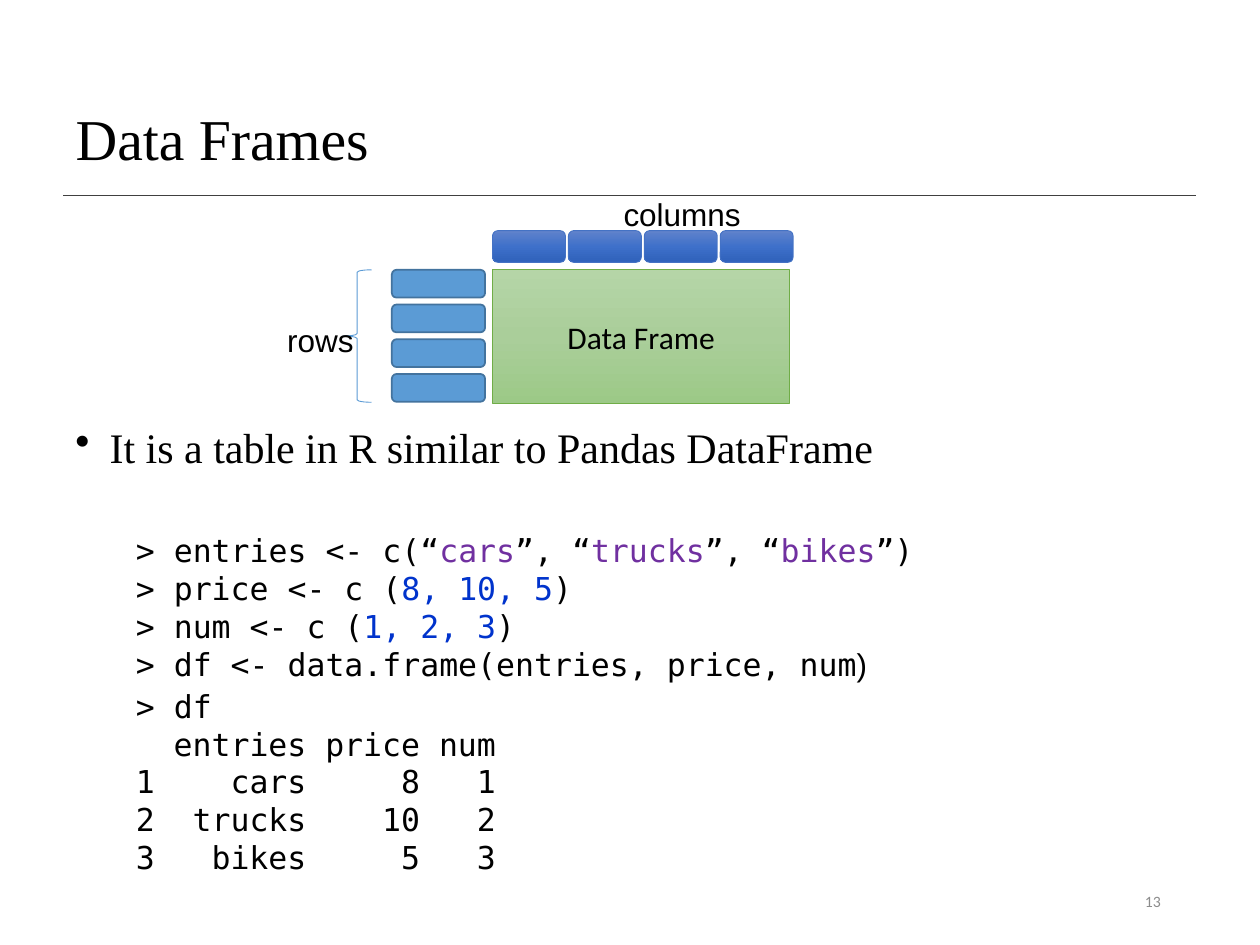
import copy

import pptx
import pptx.dml.color
import pptx.enum.shapes
import pptx.enum.text
import pptx.oxml.ns
import pptx.util
from lxml import etree

Cm = pptx.util.Cm
Pt = pptx.util.Pt
qn = pptx.oxml.ns.qn
Shape = pptx.enum.shapes.MSO_SHAPE
Align = pptx.enum.text.PP_ALIGN
Anchor = pptx.enum.text.MSO_ANCHOR

SERIF, SANS, MONO, BODY = "Times New Roman", "Arial", "DejaVu Sans Mono", "Calibri"
BLACK, PURPLE, BLUE = "000000", "7030A0", "0033CC"
GREENS = ["B5D5A7", "AACE9A", "9CC987"]
BLUES = ["6183CB", "3E70CA", "3062BB"]
CHAR = 0.382

CODE = [
    [("> entries <- c(“",), ("cars", PURPLE), ("”, “",), ("trucks", PURPLE),
     ("”, “",), ("bikes", PURPLE), ("”)",)],
    [("> price <- c (",), ("8, 10, 5", BLUE), (")",)],
    [("> num <- c (",), ("1, 2, 3", BLUE), (")",)],
    [("> df <- data.frame(entries, price, num",), (")", BLACK, SANS)],
]
TABLE = [
    ("", "entries", "price", "num"),
    ("1", "cars", "8", "1"),
    ("2", "trucks", "10", "2"),
    ("3", "bikes", "5", "3"),
]


def color(code):
    """Return the colour for a hex string."""
    return pptx.dml.color.RGBColor.from_string(code)


def style(font, name, size, code=BLACK):
    """Set the face, size and colour of a font."""
    font.name, font.size = name, Pt(size)
    font.color.rgb = color(code)


def write(slide, box, name, size, text="", code=BLACK, wrap=True):
    """Add a text box with one styled paragraph and return its frame."""
    frame = slide.shapes.add_textbox(*map(Cm, box)).text_frame
    frame.word_wrap = wrap
    line = frame.paragraphs[0]
    line.text = text
    style(line.font, name, size, code)
    return frame


def block(slide, kind, box, fill, edge, width):
    """Add a shape with a plain, graded or empty fill."""
    shape = slide.shapes.add_shape(kind, *map(Cm, box))
    shape.shadow.inherit = False
    shape.line.color.rgb = color(edge)
    shape.line.width = Pt(width)
    if fill is None:
        shape.fill.background()
    elif isinstance(fill, str):
        shape.fill.solid()
        shape.fill.fore_color.rgb = color(fill)
    else:
        shape.fill.gradient()
        shape.fill.gradient_angle = 270
        stops = shape._element.spPr.find(".//" + qn("a:gsLst"))
        stops.insert(1, copy.deepcopy(stops[0]))
        for rank, stop in enumerate(shape.fill.gradient_stops):
            stop.position = rank / 2
            stop.color.rgb = color(fill[rank])
    return shape


def head(slide, left, top, width, height):
    """Place the title and the rule below it."""
    title = slide.shapes.title
    title.left, title.top = Cm(left), Cm(top)
    title.width, title.height = Cm(width), Cm(height)
    frame = title.text_frame
    frame.text = "Data Frames"
    frame.vertical_anchor = Anchor.MIDDLE
    line = frame.paragraphs[0]
    line.alignment, line.line_spacing = Align.LEFT, 0.9
    style(line.font, SERIF, 33)
    level = Cm(top + 2.92)
    rule = slide.shapes.add_connector(
        pptx.enum.shapes.MSO_CONNECTOR.STRAIGHT, Cm(left), level, Cm(left + 22.83), level)
    rule.line.color.rgb = color("404040")
    rule.line.width = Pt(1)
    etree.SubElement(rule._element.spPr, qn("a:effectLst"))


def chart(slide, left, top):
    """Draw the frame with its rows, columns and labels."""
    side, base = left + 4.39, top + 1.63
    frame = block(slide, Shape.RECTANGLE, (side, base, 5.99, 2.69), GREENS, "70AD47", 0.5)
    frame.text_frame.text = "Data Frame"
    frame.text_frame.vertical_anchor = Anchor.MIDDLE
    line = frame.text_frame.paragraphs[0]
    line.alignment = Align.CENTER
    style(line.font, BODY, 18)
    for rank in range(4):
        block(slide, Shape.ROUNDED_RECTANGLE,
              (left + 2.36, base + rank * 0.7, 1.88, 0.56), "5B9BD5", "43739E", 1)
        block(slide, Shape.ROUNDED_RECTANGLE,
              (side + rank * 1.53, top + 0.84, 1.47, 0.64), BLUES, "4472C4", 0.5)
    block(slide, Shape.LEFT_BRACE, (left + 1.37, base, 0.58, 2.67), None, "5B9BD5", 0.5)
    write(slide, (left, top + 2.54, 1.85, 1.02), SANS, 18, "rows", wrap=False)
    write(slide, (left + 6.78, top, 2.9, 1.02), SANS, 18, "columns", wrap=False)


def point(slide, *box):
    """Place the bullet point."""
    frame = write(slide, box, SERIF, 24, "It is a table in R similar to Pandas DataFrame")
    line = frame.paragraphs[0]
    line.line_spacing, line.space_before = 0.9, Pt(7.5)
    props = line._p.get_or_add_pPr()
    props.set("marL", str(Cm(0.69)))
    props.set("indent", str(Cm(-0.69)))
    mark = etree.Element(qn("a:buChar"), char="•")
    props.find(qn("a:defRPr")).addprevious(mark)


def code(slide, *box):
    """Place the lines of code with their coloured values."""
    frame = write(slide, box, MONO, 18)
    for rank, parts in enumerate(CODE):
        line = frame.add_paragraph() if rank else frame.paragraphs[0]
        for text, tint, face in ((*part, BLACK, MONO)[:3] if len(part) != 2
                                 else (*part, MONO) for part in parts):
            run = line.add_run()
            run.text = text
            style(run.font, face, 18, tint)


def result(slide, *box):
    """Place the printed table, its columns set by right tabs."""
    frame = write(slide, box, MONO, 18, "> df")
    for cells in TABLE:
        line = frame.add_paragraph()
        line.text = "\t".join(cells)
        style(line.font, MONO, 18)
        tabs = etree.Element(qn("a:tabLst"))
        for chars in (9, 15, 19):
            etree.SubElement(tabs, qn("a:tab"), pos=str(Cm(chars * CHAR)), algn="r")
        line._p.get_or_add_pPr().find(qn("a:defRPr")).addprevious(tabs)


def foot(slide, *box):
    """Place the slide number."""
    frame = write(slide, box, BODY, 9, "13", "8C8C8C")
    frame.vertical_anchor = Anchor.MIDDLE
    frame.paragraphs[0].alignment = Align.RIGHT


def main():
    """Build and save the slide."""
    deck = pptx.Presentation()
    deck.slide_width, deck.slide_height = Cm(25.4), Cm(19.05)
    slide = deck.slides.add_slide(deck.slide_layouts[5])
    head(slide, 1.27, 1.02, 22.38, 3.68)
    point(slide, 1.27, 8.48, 22.71, 1.3)
    chart(slide, 5.54, 3.81)
    code(slide, 2.49, 10.59, 17.12, 3.33)
    result(slide, 2.49, 13.72, 18.57, 4.11)
    foot(slide, 17.93, 17.65, 5.72, 1.02)
    deck.save("out.pptx")


if __name__ == "__main__":
    main()
